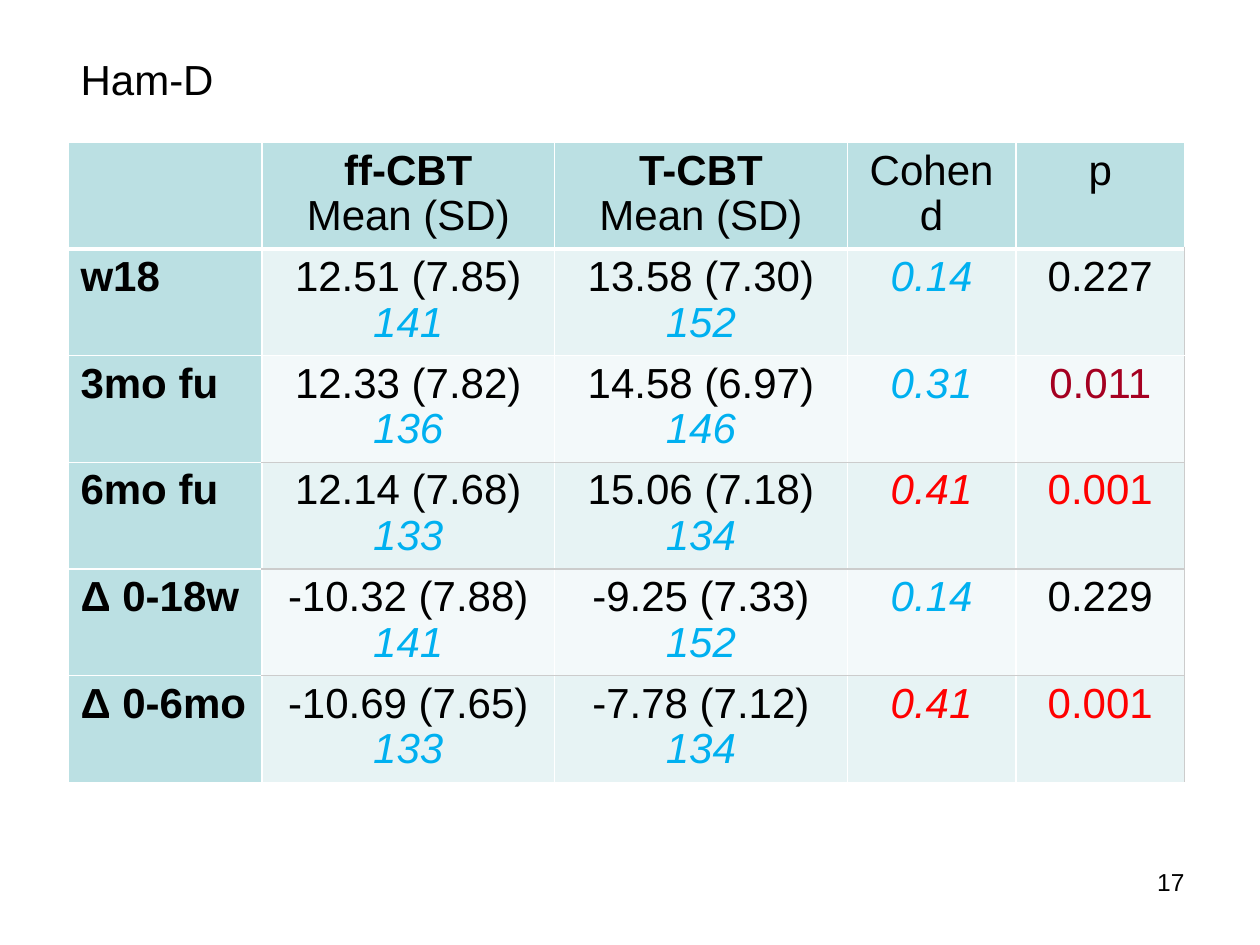
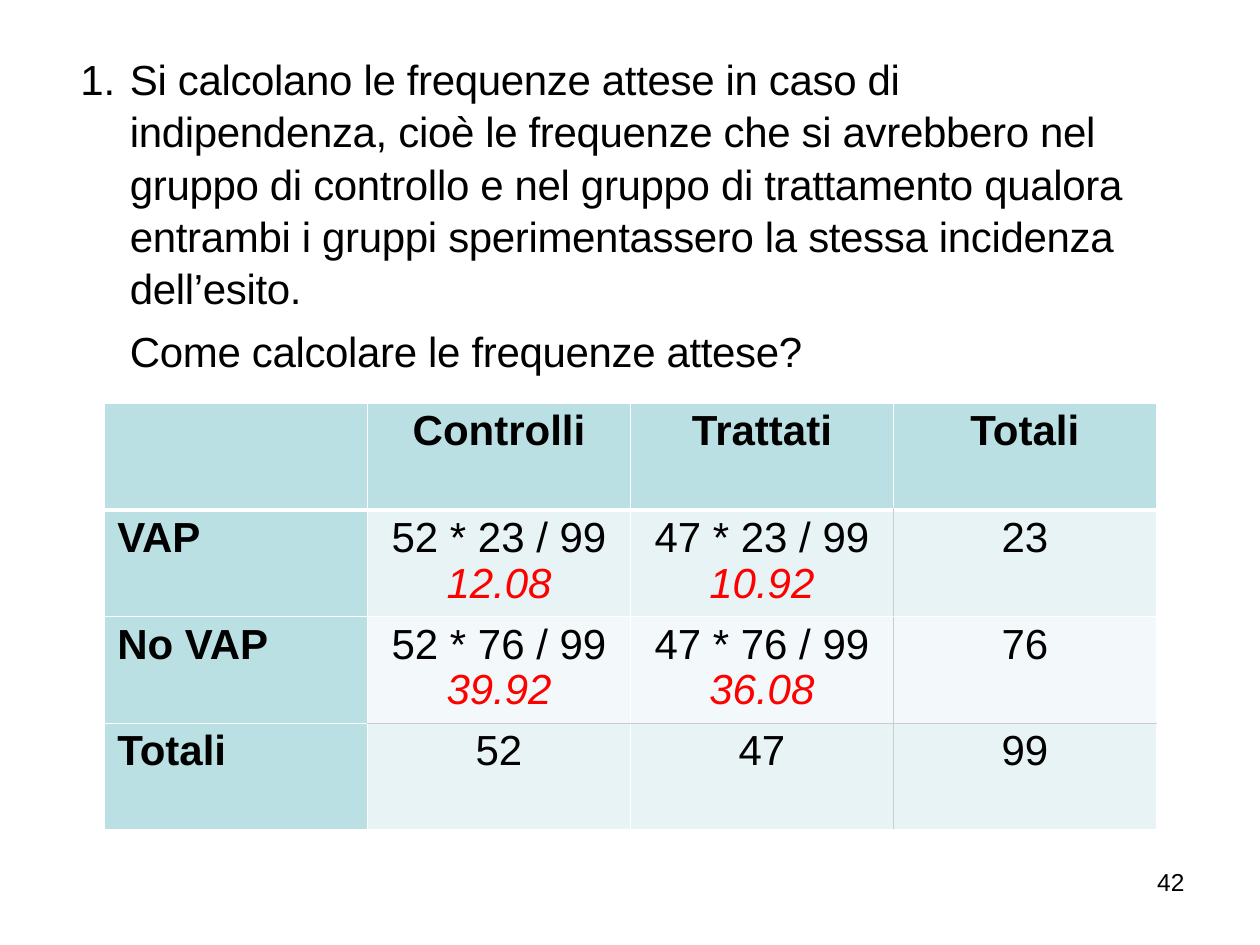
from lxml import etree
from pptx import Presentation
from pptx import util as u
from pptx.dml.color import RGBColor
from pptx.enum import text as t
from pptx.oxml import ns

FONT = "Arial"
BLACK, WHITE, GREY = "000000", "FFFFFF", "CCCCCC"
BLUE, RED, WINE = "00B0F0", "FF0000", "A50021"
HEAD, BANDS = "BBE0E3", ("E7F3F4", "F3F9FA")
LEFT, MID, RIGHT = t.PP_ALIGN.LEFT, t.PP_ALIGN.CENTER, t.PP_ALIGN.RIGHT
ROW = 2.15
TOP_BOX = (1.37, 0.91, 21.64)
PAGE_BOX = (21.69, 17.35, 2.44, 1.32)


def hue(code):
    return RGBColor.from_string(code)


def plain(words, color=BLACK):
    return words, color, False, False


def bold(words):
    return words, BLACK, True, False


def ital(words, color):
    return words, color, False, True


def add_run(para, item, size=24):
    words, color, heavy, slant = item
    run = para.add_run()
    run.text = words
    font = run.font
    font.name, font.size = FONT, u.Pt(size)
    font.bold, font.italic = heavy, slant
    font.color.rgb = hue(color)
    return run


def add_paras(frame, items, align=LEFT, space=1.0, after=0, size=24):
    for i, item in enumerate(items):
        para = frame.add_paragraph() if i else frame.paragraphs[0]
        para.alignment, para.line_spacing = align, space
        para.space_before, para.space_after = u.Pt(0), u.Pt(after)
        add_run(para, item, size)


def place(shape, box):
    shape.left, shape.top, shape.width, shape.height = map(u.Cm, box)
    frame = shape.text_frame
    frame.word_wrap = True
    frame.auto_size = t.MSO_AUTO_SIZE.NONE
    frame.vertical_anchor = t.MSO_ANCHOR.TOP
    return frame


def add_box(slide, box):
    return place(slide.shapes.add_textbox(*map(u.Cm, box)), box)


def add_page(slide, number):
    add_paras(add_box(slide, PAGE_BOX), [plain(number)], RIGHT, size=14)


def add_title(slide, words):
    frame = place(slide.shapes.title, (*TOP_BOX, 1.27))
    add_paras(frame, [plain(words)], space=1.04, after=6)


def add_step(slide, step, ask):
    frame = add_box(slide, (*TOP_BOX, 6.63))
    add_paras(frame, [plain(step), plain(ask)], space=1.04, after=6)
    for para in frame.paragraphs:
        props = para._p.get_or_add_pPr()
        props.set("marL", str(u.Cm(1)))
        para.runs[0]._r.get_or_add_rPr().set("spc", "-20")
    props = frame.paragraphs[0]._p.get_or_add_pPr()
    props.set("indent", str(-u.Cm(1)))
    font = etree.SubElement(props, ns.qn("a:buFont"))
    font.set("typeface", FONT)
    mark = etree.SubElement(props, ns.qn("a:buAutoNum"))
    mark.set("type", "arabicPeriod")


def set_edges(cell, edges):
    props = cell._tc.get_or_add_tcPr()
    for i, (side, (color, width)) in enumerate(edges.items()):
        line = etree.Element(ns.qn("a:ln" + side), w=str(u.Pt(width)))
        fill = etree.SubElement(line, ns.qn("a:solidFill"))
        etree.SubElement(fill, ns.qn("a:srgbClr"), val=color)
        props.insert(i, line)


def add_grid(slide, left, top, widths, rows, grey_col):
    shape = slide.shapes.add_table(
        len(rows), len(widths), u.Cm(left), u.Cm(top),
        u.Cm(sum(widths)), u.Cm(ROW * len(rows)))
    table = shape.table
    table.first_row = table.horz_banding = False
    for col, width in zip(table.columns, widths):
        col.width = u.Cm(width)
    last = len(rows) - 1

    def below(r, c):
        if r == 0:
            return WHITE, 3
        return (GREY if c and 1 < r < last else WHITE), 1

    def beside(r, c):
        return (GREY if r and c == grey_col else WHITE), 1

    for r, row in enumerate(rows):
        table.rows[r].height = u.Cm(ROW)
        for c, items in enumerate(row):
            cell = table.cell(r, c)
            cell.vertical_anchor = t.MSO_ANCHOR.TOP
            cell.fill.solid()
            shade = BANDS[(r - 1) % 2] if r and c else HEAD
            cell.fill.fore_color.rgb = hue(shade)
            add_paras(cell.text_frame, items, MID if c else LEFT, 0.97)
            set_edges(cell, {
                "L": beside(r, c - 1), "R": beside(r, c),
                "T": below(r - 1, c) if r else (WHITE, 1),
                "B": below(r, c)})


def score_slide(deck):
    slide = deck.slides.add_slide(deck.slide_layouts[5])
    add_title(slide, "Ham-D")
    data = [
        ("w18", "12.51 (7.85)", "141", "13.58 (7.30)", "152",
         "0.14", BLUE, "0.227", BLACK),
        ("3mo fu", "12.33 (7.82)", "136", "14.58 (6.97)", "146",
         "0.31", BLUE, "0.011", WINE),
        ("6mo fu", "12.14 (7.68)", "133", "15.06 (7.18)", "134",
         "0.41", RED, "0.001", RED),
        ("Δ 0-18w", "-10.32 (7.88)", "141", "-9.25 (7.33)", "152",
         "0.14", BLUE, "0.229", BLACK),
        ("Δ 0-6mo", "-10.69 (7.65)", "133", "-7.78 (7.12)", "134",
         "0.41", RED, "0.001", RED),
    ]
    rows = [[[]] + [[bold(arm), plain("Mean (SD)")]
                    for arm in ("ff-CBT", "T-CBT")]
            + [[plain("Cohen d")], [plain("p")]]]
    for name, mean1, n1, mean2, n2, effect, tint, prob, tone in data:
        rows.append([
            [bold(name)],
            [plain(mean1), ital(n1, BLUE)],
            [plain(mean2), ital(n2, BLUE)],
            [ital(effect, tint)], [plain(prob, tone)]])
    add_grid(slide, 1.37, 2.87, (3.91, 5.9, 5.9, 3.4, 3.4), rows, 4)
    add_page(slide, "17")


def count_slide(deck):
    slide = deck.slides.add_slide(deck.slide_layouts[6])
    add_step(
        slide,
        "Si calcolano le frequenze attese in caso di indipendenza, cioè le "
        "frequenze che si avrebbero nel gruppo di controllo e nel gruppo di "
        "trattamento qualora entrambi i gruppi sperimentassero la stessa "
        "incidenza dell’esito.",
        "Come calcolare le frequenze attese?")
    cols, total = (52, 47), 99
    rows = [[[]] + [[bold(name)]
                    for name in ("Controlli", "Trattati", "Totali")]]
    for name, sum_row in (("VAP", 23), ("No VAP", 76)):
        cells = [[plain(f"{n} * {sum_row} / {total}"),
                  ital(f"{n * sum_row / total:.2f}", RED)] for n in cols]
        rows.append([[bold(name)], *cells, [plain(str(sum_row))]])
    rows.append([[bold("Totali")]] + [[plain(str(n))]
                                      for n in (*cols, total)])
    add_grid(slide, 2.11, 8.13, (5.3,) * 4, rows, 2)
    add_page(slide, "42")


def main():
    deck = Presentation()
    deck.slide_width, deck.slide_height = u.Cm(25.4), u.Cm(19.05)
    score_slide(deck)
    count_slide(deck)
    deck.save("out.pptx")


if __name__ == "__main__":
    main()
